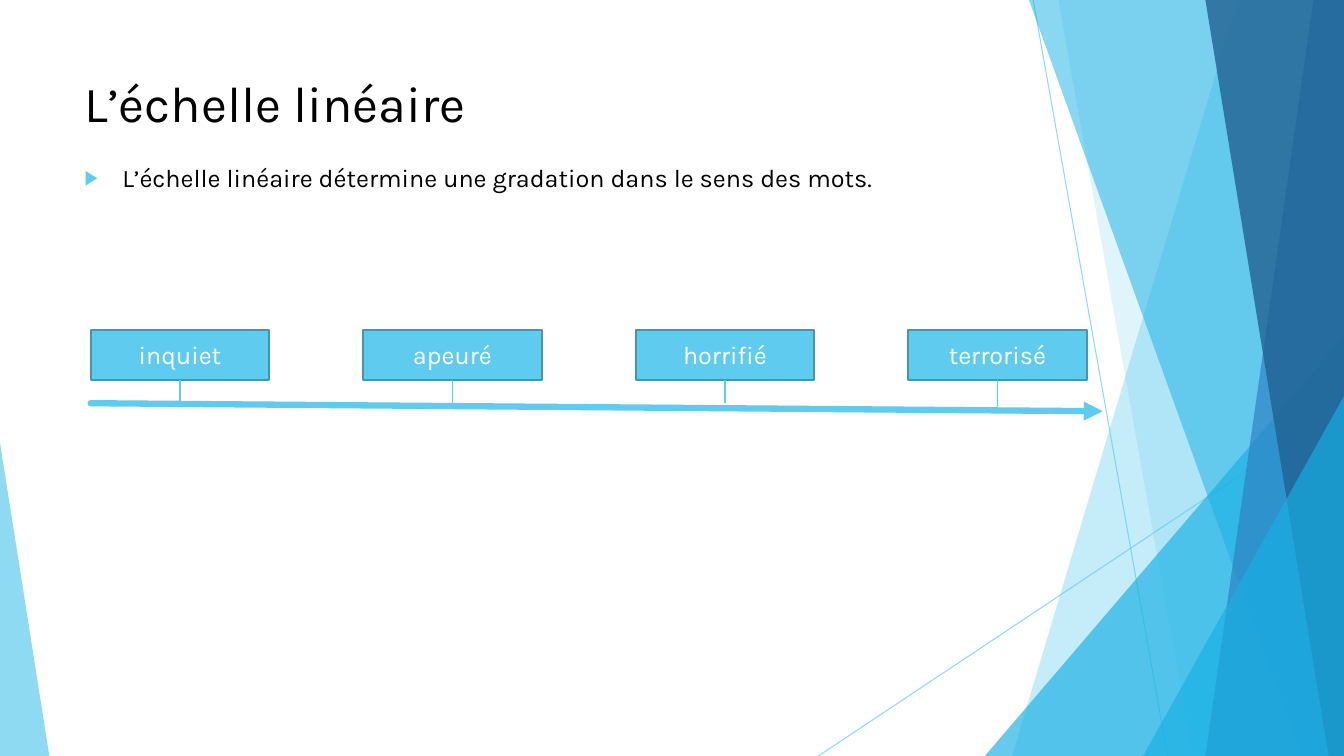
from dataclasses import dataclass

import lxml.etree
import pptx
import pptx.dml.color
import pptx.enum.shapes
import pptx.enum.text
import pptx.oxml.ns
import pptx.shapes.autoshape
import pptx.shapes.base
import pptx.shapes.connector
import pptx.slide
import pptx.text.text
import pptx.util

SLIDE_WIDTH, SLIDE_HEIGHT = pptx.util.Inches(13.33), pptx.util.Inches(7.5)
COLUMNS, ROWS = 160, 90


@dataclass(frozen=True)
class Theme:
    font: str = "Karla"
    title_size: int = 36
    text_size: int = 18
    text: str = "000000"
    box_text: str = "FFFFFF"
    sky: str = "5FCBEF"
    azure: str = "17B0E4"
    blue: str = "2E83C3"
    navy: str = "226292"
    box_edge: str = "4696B1"


THEME = Theme()


@dataclass(frozen=True)
class Band:
    """Area from a slanted left edge to the right side of the slide."""
    top_column: float
    bottom_column: float
    color: str
    opacity: int


@dataclass(frozen=True)
class Wedge:
    """Right triangle standing on the bottom of the slide."""
    left: float
    top: float
    right: float
    peak: float
    color: str
    opacity: int


@dataclass(frozen=True)
class Degree:
    word: str
    tick_end: float = 48


RAYS = [((123, 0), (139, 90)), ((160, 48.36), (97.44, 90))]
FACETS: list[Band | Wedge] = [
    Band(147.36, 120.48, THEME.sky, 36),
    Band(126, 142, THEME.sky, 20),
    Wedge(117.24, 40, COLUMNS, 1, THEME.azure, 66),
    Band(122.5, 154.92, THEME.azure, 50),
    Band(156.36, 143.5, THEME.blue, 70),
    Band(143.5, 158.16, THEME.navy, 80),
    Wedge(136.08, 47.16, COLUMNS, 1, THEME.azure, 66),
    Wedge(0, 52.68, 5.88, 0, THEME.sky, 70),
]
DEGREES = [Degree("inquiet"), Degree("apeuré"), Degree("horrifié"), Degree("terrorisé", 48.48)]
SCALE_LEFT, DEGREE_STEP = 10.8, 32.44
BOX_TOP, BOX_WIDTH, BOX_HEIGHT = 39.24, 21.24, 6


def col(columns: float) -> int:
    return round(SLIDE_WIDTH * columns / COLUMNS)


def row(rows: float) -> int:
    return round(SLIDE_HEIGHT * rows / ROWS)


def rgb(color: str) -> pptx.dml.color.RGBColor:
    return pptx.dml.color.RGBColor.from_string(color)


def add_xml(parent: lxml.etree._Element, tag: str, **attributes: str) -> lxml.etree._Element:
    return lxml.etree.SubElement(parent, pptx.oxml.ns.qn(tag), attributes)


def set_opacity(shape: pptx.shapes.base.BaseShape, percent: int) -> None:
    for color in shape.element.spPr.iter(pptx.oxml.ns.qn("a:srgbClr")):
        add_xml(color, "a:alpha", val=str(percent * 1000))


def format_text(paragraph: pptx.text.text._Paragraph, size: int, color: str,
                alignment: pptx.enum.text.PP_ALIGN) -> None:
    paragraph.alignment = alignment
    for run in paragraph.runs:
        run.font.name = THEME.font
        run.font.size = pptx.util.Pt(size)
        run.font.color.rgb = rgb(color)


def add_line(slide: pptx.slide.Slide, start: tuple[float, float], end: tuple[float, float],
             width: float) -> pptx.shapes.connector.Connector:
    line = slide.shapes.add_connector(
        pptx.enum.shapes.MSO_CONNECTOR.STRAIGHT,
        col(start[0]), row(start[1]), col(end[0]), row(end[1]))
    line.line.width = pptx.util.Pt(width)
    line.line.color.rgb = rgb(THEME.sky)
    add_xml(line.element.spPr, "a:effectLst")
    return line


def add_facet(slide: pptx.slide.Slide, facet: Band | Wedge) -> None:
    if isinstance(facet, Band):
        outline = slide.shapes.build_freeform(col(facet.top_column), 0)
        outline.add_line_segments([
            (col(COLUMNS), 0), (col(COLUMNS), row(ROWS)),
            (col(facet.bottom_column), row(ROWS))], close=True)
        shape = outline.convert_to_shape()
    else:
        shape = slide.shapes.add_shape(
            pptx.enum.shapes.MSO_SHAPE.ISOSCELES_TRIANGLE, col(facet.left), row(facet.top),
            col(facet.right - facet.left), row(ROWS - facet.top))
        shape.adjustments[0] = facet.peak
    shape.shadow.inherit = False
    shape.fill.solid()
    shape.fill.fore_color.rgb = rgb(facet.color)
    shape.line.fill.background()
    set_opacity(shape, facet.opacity)


def fill_placeholder(holder: pptx.shapes.autoshape.Shape, words: str, top: float,
                     height: float, size: int) -> None:
    holder.left, holder.top = col(8.88), row(top)
    holder.width, holder.height = col(112.8), row(height)
    frame = holder.text_frame
    frame.text = words
    frame.word_wrap = True
    frame.auto_size = pptx.enum.text.MSO_AUTO_SIZE.NONE
    frame.vertical_anchor = pptx.enum.text.MSO_ANCHOR.TOP
    format_text(frame.paragraphs[0], size, THEME.text, pptx.enum.text.PP_ALIGN.LEFT)


def add_bullet(paragraph: pptx.text.text._Paragraph) -> None:
    paragraph.space_before = pptx.util.Pt(10)
    properties = paragraph._p.get_or_add_pPr()
    indent = col(4.5)
    properties.set("marL", str(indent))
    properties.set("indent", str(-indent))
    add_xml(add_xml(properties, "a:buClr"), "a:srgbClr", val=THEME.sky)
    add_xml(properties, "a:buSzPct", val="80000")
    add_xml(properties, "a:buFont", typeface=THEME.font)
    add_xml(properties, "a:buChar", char="▶")


def add_degree_box(slide: pptx.slide.Slide, word: str, left: float) -> pptx.shapes.autoshape.Shape:
    box = slide.shapes.add_shape(pptx.enum.shapes.MSO_SHAPE.RECTANGLE, col(left), row(BOX_TOP),
                                 col(BOX_WIDTH), row(BOX_HEIGHT))
    box.shadow.inherit = False
    box.fill.solid()
    box.fill.fore_color.rgb = rgb(THEME.sky)
    box.line.color.rgb = rgb(THEME.box_edge)
    box.line.width = pptx.util.Pt(1.5)
    box.text_frame.text = word
    box.text_frame.vertical_anchor = pptx.enum.text.MSO_ANCHOR.MIDDLE
    format_text(box.text_frame.paragraphs[0], THEME.text_size, THEME.box_text,
                pptx.enum.text.PP_ALIGN.CENTER)
    return box


def main() -> None:
    deck = pptx.Presentation()
    deck.slide_width, deck.slide_height = SLIDE_WIDTH, SLIDE_HEIGHT
    slide = deck.slides.add_slide(deck.slide_layouts[1])

    for start, end in RAYS:
        set_opacity(add_line(slide, start, end, 0.75), 70)
    for facet in FACETS:
        add_facet(slide, facet)

    title, definition = slide.placeholders
    fill_placeholder(title, "L’échelle linéaire", 8, 17.28, THEME.title_size)
    fill_placeholder(definition, "L’échelle linéaire détermine une gradation dans le sens des mots.",
                     18.72, 60.6, THEME.text_size)
    add_bullet(definition.text_frame.paragraphs[0])

    scale = add_line(slide, (SCALE_LEFT, 48), (131.28, 48.96), 4.5)
    scale_stroke = scale.line._get_or_add_ln()
    scale_stroke.set("cap", "rnd")
    add_xml(scale_stroke, "a:tailEnd", type="triangle")

    for index, degree in enumerate(DEGREES):
        left = SCALE_LEFT + index * DEGREE_STEP
        box = add_degree_box(slide, degree.word, left)
        middle = left + BOX_WIDTH / 2
        tick = add_line(slide, (middle, BOX_TOP + BOX_HEIGHT), (middle, degree.tick_end), 1)
        tick.begin_connect(box, 2)

    deck.save("out.pptx")


if __name__ == "__main__":
    main()
